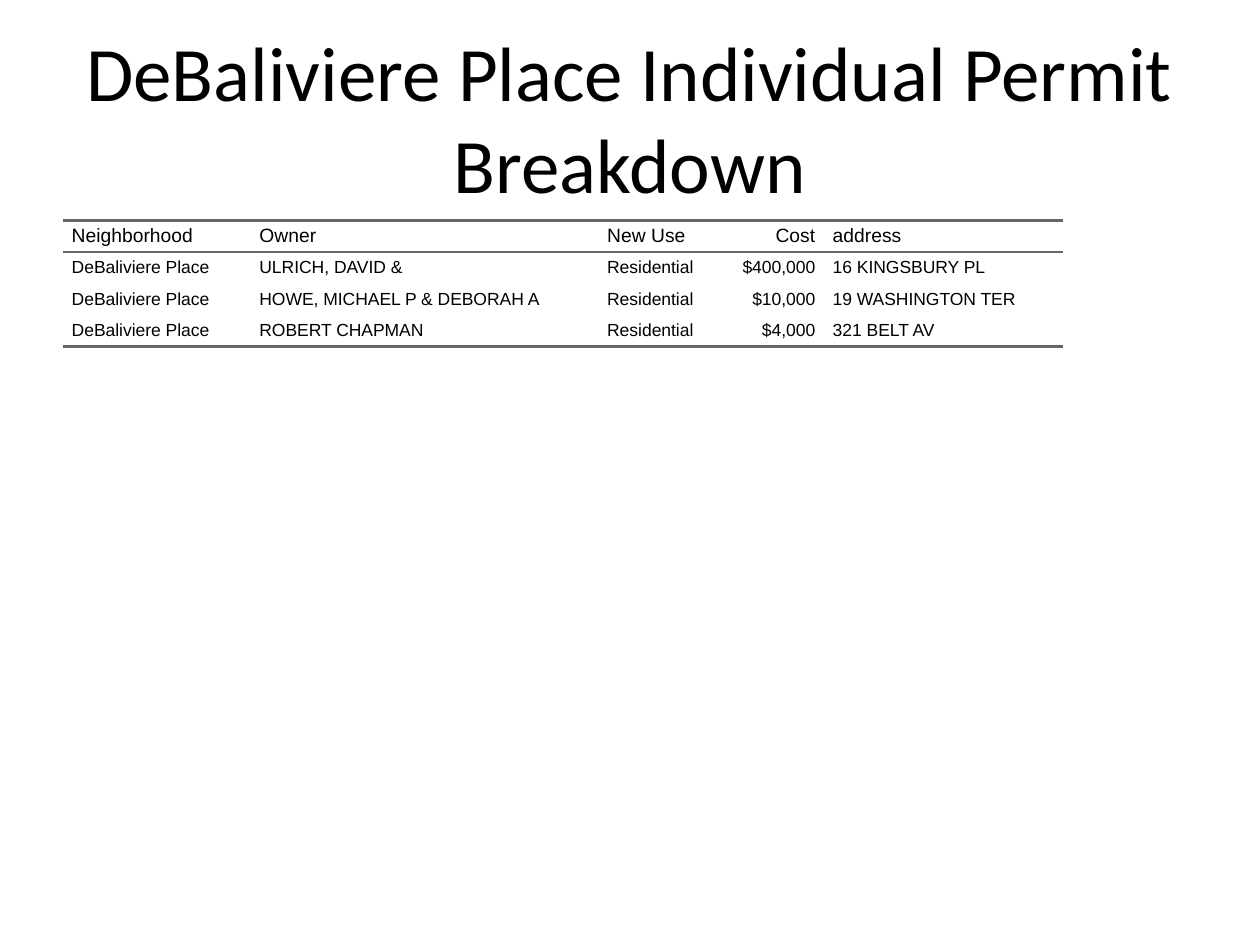
from lxml.etree import SubElement
from pptx import Presentation
from pptx.dml.color import RGBColor
from pptx.enum.text import MSO_ANCHOR, PP_ALIGN
from pptx.oxml.ns import qn
from pptx.util import Pt

BLACK = RGBColor(0x00, 0x00, 0x00)
RULE_GRAY = RGBColor(0x66, 0x66, 0x66)

PERMITS = [
    ["Neighborhood", "Owner", "New Use", "Cost", "address"],
    ["DeBaliviere Place", "ULRICH, DAVID &", "Residential", "$400,000", "16 KINGSBURY PL"],
    ["DeBaliviere Place", "HOWE, MICHAEL P & DEBORAH A", "Residential", "$10,000", "19 WASHINGTON TER"],
    ["DeBaliviere Place", "ROBERT CHAPMAN", "Residential", "$4,000", "321 BELT AV"],
]
COLUMN_WIDTHS = [107.28, 198.72, 74.88, 54, 136.8]
ROW_HEIGHT = 18
COST_COLUMN = PERMITS[0].index("Cost")
RULED_SIDES = {0: ["lnT", "lnB"], 1: ["lnT"], len(PERMITS) - 1: ["lnB"]}

TITLE_BOX = {"left": Pt(36), "top": Pt(21.6), "width": Pt(648), "height": Pt(90)}
TABLE_BOX = {"left": Pt(36), "top": Pt(126), "width": Pt(648), "height": Pt(356.4)}
CELL_FORMAT = {
    "vertical_anchor": MSO_ANCHOR.MIDDLE,
    "margin_left": Pt(5),
    "margin_right": Pt(5),
    "margin_top": Pt(0),
    "margin_bottom": Pt(0),
}
PARAGRAPH_FORMAT = {"space_before": Pt(5), "space_after": Pt(5)}


def set_format(target, values):
    for name, value in values.items():
        setattr(target, name, value)


def set_font(font, face, size):
    set_format(font, {"name": face, "size": Pt(size)})
    font.color.rgb = BLACK


def add_title(slide, wording):
    title = slide.shapes.title
    set_format(title, TITLE_BOX)
    set_format(title.text_frame, {"text": wording, "vertical_anchor": MSO_ANCHOR.MIDDLE})
    heading = title.text_frame.paragraphs[0]
    heading.alignment = PP_ALIGN.CENTER
    set_font(heading.runs[0].font, "Calibri", 44)


def add_borders(cell, ruled_sides):
    properties = cell._tc.get_or_add_tcPr()
    for position, side in enumerate(["lnL", "lnR", "lnT", "lnB"]):
        ruled = side in ruled_sides
        border = SubElement(properties, qn(f"a:{side}"), w=str(Pt(1.5) if ruled else 0))
        properties.insert(position, border)
        fill = SubElement(border, qn("a:solidFill" if ruled else "a:noFill"))
        if ruled:
            SubElement(fill, qn("a:srgbClr"), val=str(RULE_GRAY))


def fill_cell(cell, wording, size, alignment, ruled_sides):
    set_format(cell, CELL_FORMAT)
    cell.fill.background()
    cell.text = wording
    entry = cell.text_frame.paragraphs[0]
    set_format(entry, PARAGRAPH_FORMAT)
    entry.alignment = alignment
    set_font(entry.runs[0].font, "Arial", size)
    add_borders(cell, ruled_sides)


def add_permit_table(slide):
    frame = slide.shapes.add_table(len(PERMITS), len(COLUMN_WIDTHS), **TABLE_BOX)
    permits = frame.table
    set_format(permits, {"first_row": False, "horz_banding": False})
    for column, width in zip(permits.columns, COLUMN_WIDTHS):
        column.width = Pt(width)
    for row_index, record in enumerate(PERMITS):
        permits.rows[row_index].height = Pt(ROW_HEIGHT)
        size = 11 if row_index == 0 else 10
        for column_index, wording in enumerate(record):
            alignment = PP_ALIGN.RIGHT if column_index == COST_COLUMN else PP_ALIGN.LEFT
            cell = permits.cell(row_index, column_index)
            fill_cell(cell, wording, size, alignment, RULED_SIDES.get(row_index, []))
    set_format(frame, TABLE_BOX)


def main():
    deck = Presentation()
    set_format(deck, {"slide_width": Pt(720), "slide_height": Pt(540)})
    slide = deck.slides.add_slide(deck.slide_layouts[5])
    add_title(slide, "DeBaliviere Place Individual Permit Breakdown")
    add_permit_table(slide)
    deck.save("out.pptx")


if __name__ == "__main__":
    main()
